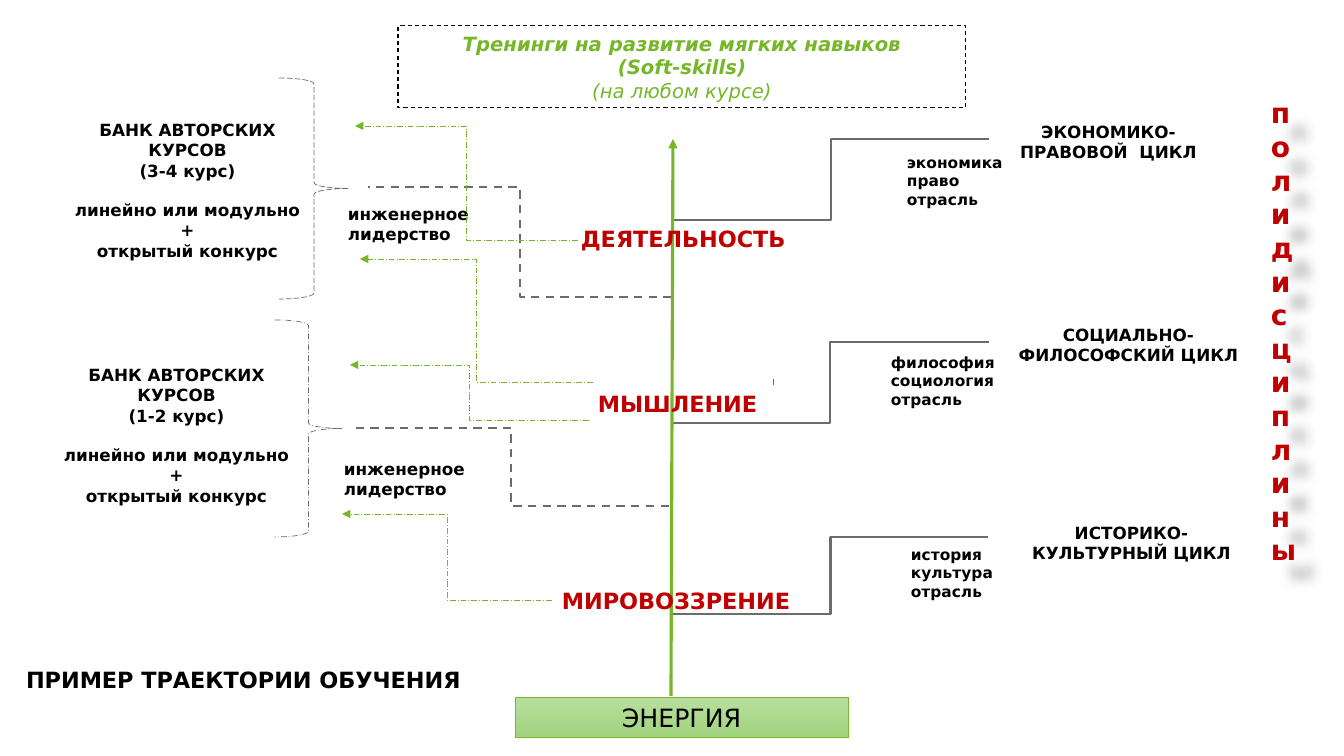
from lxml import etree
from pptx import Presentation
from pptx.dml.color import RGBColor
from pptx.enum.dml import MSO_LINE
from pptx.enum.shapes import MSO_CONNECTOR, MSO_SHAPE
from pptx.enum.text import MSO_ANCHOR, MSO_AUTO_SIZE, PP_ALIGN
from pptx.oxml import parse_xml
from pptx.oxml.ns import nsdecls, qn
from pptx.util import Pt

DASH, LONG_DASH, LONG_DASH_DOT = MSO_LINE.DASH, MSO_LINE.LONG_DASH, MSO_LINE.LONG_DASH_DOT
STRAIGHT, ELBOW = MSO_CONNECTOR.STRAIGHT, MSO_CONNECTOR.ELBOW
RECTANGLE, BRACE = MSO_SHAPE.RECTANGLE, MSO_SHAPE.RIGHT_BRACE
TOP, MIDDLE = MSO_ANCHOR.TOP, MSO_ANCHOR.MIDDLE
LEFT, CENTER = PP_ALIGN.LEFT, PP_ALIGN.CENTER
NO_FIT = MSO_AUTO_SIZE.NONE

BLACK, GRAY, GREEN, RED = "000000", "6B6C6B", "76B729", "C00000"
PX_PER_INCH = 100.8


def px(length):
    return round(length * 914400 / PX_PER_INCH)


def rgb(value):
    return RGBColor.from_string(value)


class Diagram:
    font_name = "DejaVu Sans"

    def __init__(self, deck):
        self.page = deck.slides.add_slide(deck.slide_layouts[5])

    def fill_text(self, box, lines, size, color=BLACK, align=LEFT, anchor=TOP,
                  wrap=True, bold=True, italic=False, plain=(), gaps=()):
        frame = box.text_frame
        settings = {"word_wrap": wrap, "auto_size": NO_FIT, "vertical_anchor": anchor}
        for name, value in settings.items():
            setattr(frame, name, value)
        for index, line in enumerate(lines):
            para = frame.paragraphs[0] if index == 0 else frame.add_paragraph()
            para.alignment = align
            if index in gaps:
                para.space_before = Pt(14)
            span = para.add_run()
            span.text = line
            formats = {"name": self.font_name, "size": Pt(size), "italic": italic,
                       "bold": bold and index not in plain}
            for name, value in formats.items():
                setattr(span.font, name, value)
            span.font.color.rgb = rgb(color)

    def title(self, area, text, size):
        box = self.page.shapes.title
        for name, value in zip(("left", "top", "width", "height"), area):
            setattr(box, name, px(value))
        self.fill_text(box, [text], size, wrap=False)

    def text(self, area, lines, size, **style):
        box = self.page.shapes.add_textbox(*map(px, area))
        self.fill_text(box, lines, size, **style)
        return box

    def stroke(self, line, color, width, dash):
        line.color.rgb = rgb(color)
        line.width = Pt(width)
        if dash:
            line.dash_style = dash

    def shape(self, kind, area, color, width, dash=None, gradient=None):
        shape = self.page.shapes.add_shape(kind, *map(px, area))
        shape.shadow.inherit = False
        self.stroke(shape.line, color, width, dash)
        if gradient:
            shape.fill.gradient()
            shape.fill.gradient_angle = 270
            for stop, shade in zip(shape.fill.gradient_stops, gradient):
                stop.color.rgb = rgb(shade)
        else:
            shape.fill.background()
        return shape

    def connect(self, kind, ends, color, width, dash=None, arrow=False):
        connector = self.page.shapes.add_connector(kind, *map(px, ends))
        self.stroke(connector.line, color, width, dash)
        properties = connector._element.spPr
        if arrow:
            outline = properties.find(qn("a:ln"))
            etree.SubElement(outline, qn("a:tailEnd"), type="triangle")
        etree.SubElement(properties, qn("a:effectLst"))

    def stacked_text(self, area, text, size, color):
        box = self.text(area, [text], size, color=color)
        box.text_frame._txBody.bodyPr.set("vert", "wordArtVert")
        box._element.spPr.append(parse_xml(
            f'<a:effectLst {nsdecls("a")}>'
            '<a:outerShdw blurRad="110000" dist="225000" dir="2700000">'
            '<a:srgbClr val="000000"><a:alpha val="30000"/></a:srgbClr>'
            '</a:outerShdw></a:effectLst>'))


def main():
    deck = Presentation()
    deck.slide_width, deck.slide_height = px(1344), px(756)
    diagram = Diagram(deck)
    diagram.title((16, 661, 458, 37), "ПРИМЕР ТРАЕКТОРИИ ОБУЧЕНИЯ", 16)

    for ends in ((669, 506, 354, 428), (672, 297, 368, 187)):
        diagram.connect(ELBOW, ends, GRAY, 1.5, DASH)
    for ends in ((673, 614, 988, 537), (671, 423, 989, 342), (673, 220, 989, 139)):
        diagram.connect(ELBOW, ends, GRAY, 1.5)
    diagram.connect(STRAIGHT, (773, 379, 773, 385), GRAY, 0.5)

    energy = diagram.shape(RECTANGLE, (515, 697, 333, 40), GREEN, 0.5,
                           gradient=("B8DFA0", "A1D37E"))
    diagram.fill_text(energy, ["ЭНЕРГИЯ"], 18, align=CENTER, anchor=MIDDLE, bold=False)
    diagram.connect(STRAIGHT, (671, 696, 673, 139), GREEN, 2.25, arrow=True)

    cycles = (
        (1008, 518, "ИСТОРИКО-КУЛЬТУРНЫЙ ЦИКЛ"),
        (1005, 320, "СОЦИАЛЬНО-ФИЛОСОФСКИЙ ЦИКЛ"),
        (985, 117, "ЭКОНОМИКО-ПРАВОВОЙ  ЦИКЛ"),
    )
    for left, top, name in cycles:
        diagram.text((left, top, 247, 50), [name], 12, align=CENTER)

    subjects = (
        (901, 540, 107, ("история", "культура")),
        (881, 348, 127, ("философия", "социология")),
        (897, 148, 117, ("экономика", "право")),
    )
    for left, top, width, names in subjects:
        diagram.text((left, top, width, 66), (*names, "отрасль"), 11, wrap=False)

    stages = ((552, 582, "МИРОВОЗЗРЕНИЕ"), (588, 385, "МЫШЛЕНИЕ"), (571, 220, "ДЕЯТЕЛЬНОСТЬ"))
    for left, top, name in stages:
        diagram.text((left, top, 302, 37), [name], 16, color=RED)

    for left, top in ((334, 454), (338, 199)):
        diagram.text((left, top, 162, 50), ["инженерное лидерство"], 12)

    for left, top, years in ((40, 360, "1-2"), (51, 115, "3-4")):
        lines = ("БАНК АВТОРСКИХ КУРСОВ", f"({years} курс)",
                 "линейно или модульно", "+", "открытый конкурс")
        diagram.text((left, top, 273, 153), lines, 12, align=CENTER, gaps=(2,))
    diagram.shape(BRACE, (275, 320, 67, 217), GRAY, 0.5, LONG_DASH_DOT)
    diagram.shape(BRACE, (279, 78, 70, 221), GRAY, 0.5, LONG_DASH)

    trainings = diagram.shape(RECTANGLE, (398, 26, 568, 82), BLACK, 0.75, DASH)
    lines = ("Тренинги на развитие мягких навыков", "(Soft-skills)", "(на любом курсе)")
    diagram.fill_text(trainings, lines, 14, color=GREEN, align=CENTER, anchor=MIDDLE,
                      italic=True, plain=(2,))

    diagram.stacked_text((1261, 91, 60, 578), "полидисциплины", 20, RED)

    returns = ((589, 420, 350, 365), (552, 600, 342, 514),
               (593, 382, 360, 259), (578, 240, 355, 126))
    for ends in returns:
        diagram.connect(ELBOW, ends, GREEN, 0.5, LONG_DASH_DOT, arrow=True)

    deck.save("out.pptx")


if __name__ == "__main__":
    main()
